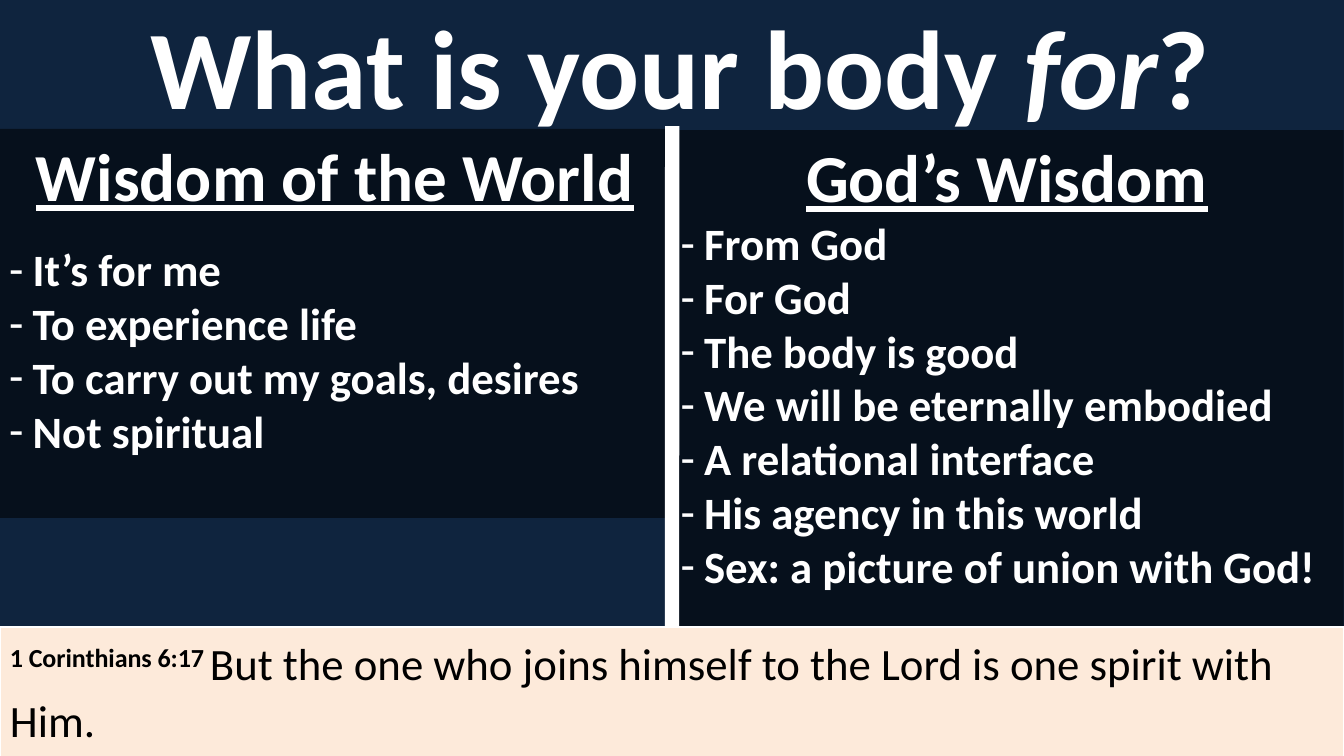
"""Build a slide contrasting two views of what the body is for."""
from dataclasses import dataclass

from lxml.etree import SubElement
from pptx import Presentation
from pptx.dml.color import RGBColor
from pptx.enum.shapes import MSO_CONNECTOR as Connector, MSO_SHAPE as Shape
from pptx.enum.text import MSO_ANCHOR as Anchor, MSO_AUTO_SIZE as AutoSize, PP_ALIGN as Align
from pptx.oxml.ns import qn
from pptx.util import Cm, Pt


@dataclass(frozen=True)
class Theme:
    """Colours and type sizes of the slide."""
    font: str = "Calibri"
    background: RGBColor = RGBColor(0x0F, 0x24, 0x3E)
    panel: RGBColor = RGBColor(0, 0, 0)
    panel_opacity: int = 54
    light: RGBColor = RGBColor(0xFF, 0xFF, 0xFF)
    dark: RGBColor = RGBColor(0, 0, 0)
    verse: RGBColor = RGBColor(0xFD, 0xEA, 0xDA)
    title_size: Pt = Pt(80)
    heading_size: Pt = Pt(48)
    text_size: Pt = Pt(32)
    divider_width: Pt = Pt(10.25)
    verse_border: Pt = Pt(1.5)


THEME = Theme()
TWO_CONTENT_LAYOUT = 3
TOP_SIDE = 0
LEFT_ITEMS = ["It’s for me", "To experience life",
              "To carry out my goals, desires", "Not spiritual"]
RIGHT_ITEMS = ["From God", "For God", "The body is good",
               "We will be eternally embodied", "A relational interface",
               "His agency in this world", "Sex: a picture of union with God!"]


def add_run(paragraph, text, size, color=THEME.light, bold=True, italic=False, underline=False):
    run = paragraph.add_run()
    run.text = text
    font = run.font
    font.name, font.size, font.bold = THEME.font, size, bold
    font.italic, font.underline = italic, underline
    font.color.rgb = color
    return run


def place(shape, left, top, width, height):
    shape.left, shape.top = Cm(left), Cm(top)
    shape.width, shape.height = Cm(width), Cm(height)


def prepare_text(shape, anchor):
    frame = shape.text_frame
    frame.word_wrap = True
    frame.auto_size = AutoSize.NONE
    frame.vertical_anchor = anchor
    return frame


def set_bullet(paragraph, character=None, indent=0):
    properties = paragraph._p.get_or_add_pPr()
    properties.set("marL", str(Cm(indent)))
    properties.set("indent", str(-Cm(indent)))
    if character:
        SubElement(properties, qn("a:buChar")).set("char", character)
    else:
        SubElement(properties, qn("a:buNone"))


def fill_title(title):
    place(title, -0.43, 0, 35.13, 3.28)
    paragraph = prepare_text(title, Anchor.MIDDLE).paragraphs[0]
    paragraph.alignment = Align.CENTER
    add_run(paragraph, "What is your body ", THEME.title_size)
    add_run(paragraph, "for", THEME.title_size, italic=True)
    add_run(paragraph, "?", THEME.title_size)


def fill_panel(panel, box, heading, items, heading_gap):
    place(panel, *box)
    panel.fill.solid()
    panel.fill.fore_color.rgb = THEME.panel
    color = panel.fill._xPr.find(".//" + qn("a:srgbClr"))
    SubElement(color, qn("a:alpha")).set("val", str(THEME.panel_opacity * 1000))

    frame = prepare_text(panel, Anchor.TOP)
    paragraph = frame.paragraphs[0]
    paragraph.alignment = Align.CENTER
    paragraph.space_before, paragraph.space_after = Pt(0), heading_gap
    set_bullet(paragraph)
    add_run(paragraph, heading, THEME.heading_size, underline=True)
    for item in items:
        paragraph = frame.add_paragraph()
        paragraph.alignment = Align.LEFT
        paragraph.space_before = Pt(0)
        set_bullet(paragraph, "-", 0.6)
        add_run(paragraph, item, THEME.text_size)


def add_verse(slide, reference, text):
    verse = slide.shapes.add_shape(Shape.RECTANGLE, Cm(0), Cm(15.8), Cm(33.87), Cm(3.33))
    verse.shadow.inherit = False
    verse.fill.solid()
    verse.fill.fore_color.rgb = THEME.verse
    verse.line.color.rgb = THEME.light
    verse.line.width = THEME.verse_border
    paragraph = prepare_text(verse, Anchor.TOP).paragraphs[0]
    paragraph.alignment = Align.LEFT
    paragraph.line_spacing = 1.07
    citation = add_run(paragraph, reference, THEME.text_size, THEME.dark)
    citation._r.get_or_add_rPr().set("baseline", "30000")
    add_run(paragraph, text, THEME.text_size, THEME.dark, bold=False)
    return verse


def add_divider(slide, verse):
    divider = slide.shapes.add_connector(
        Connector.STRAIGHT, Cm(16.94), Cm(3.18), Cm(16.94), Cm(15.8))
    divider.end_connect(verse, TOP_SIDE)
    divider.line.color.rgb = THEME.light
    divider.line.width = THEME.divider_width
    SubElement(divider._element.spPr, qn("a:effectLst"))


def main():
    presentation = Presentation()
    presentation.slide_width, presentation.slide_height = Cm(33.87), Cm(19.05)
    slide = presentation.slides.add_slide(presentation.slide_layouts[TWO_CONTENT_LAYOUT])
    slide.background.fill.solid()
    slide.background.fill.fore_color.rgb = THEME.background

    title, left_panel, right_panel = slide.placeholders
    fill_title(title)
    fill_panel(left_panel, (-0.03, 3.25, 16.94, 9.8),
               "Wisdom of the World", LEFT_ITEMS, Pt(19.5))
    fill_panel(right_panel, (16.89, 3.28, 16.97, 13.94),
               "God’s Wisdom", RIGHT_ITEMS, Pt(0))
    verse = add_verse(slide, "1 Corinthians 6:17 ",
                      "But the one who joins himself to the Lord is one spirit with Him.")
    add_divider(slide, verse)
    presentation.save("out.pptx")


if __name__ == "__main__":
    main()
